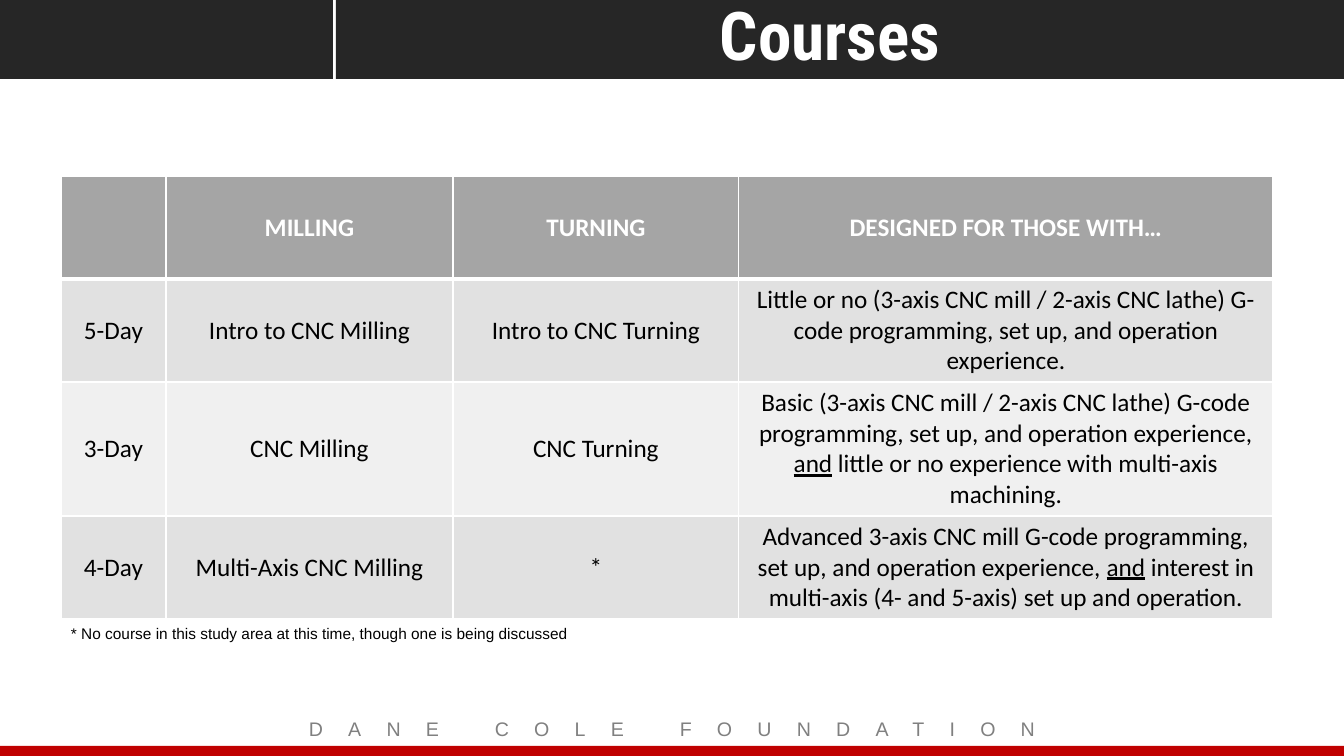
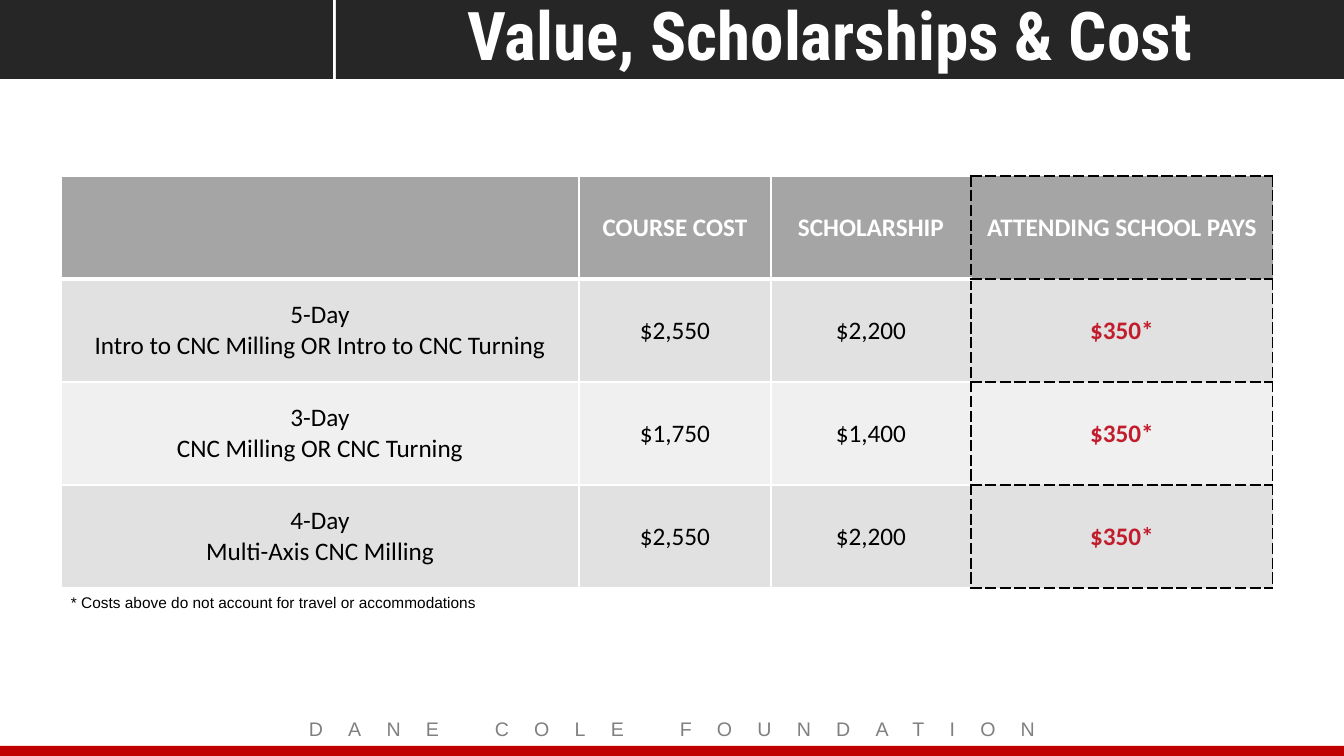
import lxml.etree
import pptx
import pptx.dml.color
import pptx.enum.shapes
import pptx.enum.text
import pptx.oxml.ns
import pptx.util

RGB = pptx.dml.color.RGBColor
ALIGN = pptx.enum.text.PP_ALIGN
MIDDLE = pptx.enum.text.MSO_ANCHOR.MIDDLE
RECTANGLE = pptx.enum.shapes.MSO_SHAPE.RECTANGLE

WHITE = RGB(0xFF, 0xFF, 0xFF)
BLACK = RGB(0x00, 0x00, 0x00)
CHARCOAL = RGB(0x26, 0x26, 0x26)
RED = RGB(0xC0, 0x00, 0x00)
PRICE_RED = RGB(0xC2, 0x1D, 0x2C)
FOOTER_GRAY = RGB(0x80, 0x80, 0x80)
HEADER_GRAY = RGB(0xA5, 0xA5, 0xA5)
DARK_ROW = RGB(0xE1, 0xE1, 0xE1)
LIGHT_ROW = RGB(0xF0, 0xF0, 0xF0)

WIDTH, HEIGHT = 1344, 756
SCALE = 12192000 / WIDTH
TABLE_LEFT, TABLE_TOP, TABLE_WIDTH = 61, 176, 1212
ROW_HEIGHT = 103

# left, top, width, height, fill
BANDS = [
    (0, 746, WIDTH, 10, RED),
    (336, 0, 1008, 79, CHARCOAL),
    (0, 0, 333, 79, CHARCOAL),
]

SLIDES = [
    {
        "title": "Courses",
        "columns": [105, 287, 286, 534],
        "heights": [ROW_HEIGHT, ROW_HEIGHT, 134, ROW_HEIGHT],
        "rows": [
            ["", "MILLING", "TURNING", "DESIGNED FOR THOSE WITH…"],
            ["5-Day", "Intro to CNC Milling", "Intro to CNC Turning",
             "Little or no (3-axis CNC mill / 2-axis CNC lathe) G-code "
             "programming, set up, and operation experience."],
            ["3-Day", "CNC Milling", "CNC Turning",
             "Basic (3-axis CNC mill / 2-axis CNC lathe) G-code programming, "
             "set up, and operation experience, _and_ little or no experience "
             "with multi-axis machining."],
            ["4-Day", "Multi-Axis CNC Milling", "*",
             "Advanced 3-axis CNC mill G-code programming, set up, and "
             "operation experience, _and_ interest in multi-axis "
             "(4- and 5-axis) set up and operation."],
        ],
        "price_column": None,
        "note": "* No course in this study area at this time, "
                "though one is being discussed",
    },
    {
        "title": "Value, Scholarships & Cost",
        "columns": [518, 192, 200, 302],
        "heights": [ROW_HEIGHT] * 4,
        "rows": [
            ["", "COURSE COST", "SCHOLARSHIP", "ATTENDING SCHOOL PAYS"],
            ["5-Day\vIntro to CNC Milling OR Intro to CNC Turning",
             "$2,550", "$2,200", "$350*"],
            ["3-Day\vCNC Milling OR CNC Turning", "$1,750", "$1,400", "$350*"],
            ["4-Day\vMulti-Axis CNC Milling", "$2,550", "$2,200", "$350*"],
        ],
        "price_column": 3,
        "note": "* Costs above do not account for travel or accommodations",
    },
]


def px(*lengths):
    """Turn pixel lengths into a list of EMU."""
    return [pptx.util.Emu(round(n * SCALE)) for n in lengths]


def add_text(s, box, text, font, size, color, align=ALIGN.CENTER, spacing=1.0):
    """Add a one-line text box and return its run."""
    tf = s.shapes.add_textbox(*px(*box)).text_frame
    tf.word_wrap = True
    tf.vertical_anchor = MIDDLE
    tf.text = text
    p = tf.paragraphs[0]
    p.alignment = align
    p.line_spacing = spacing
    r = p.runs[0]
    r.font.name = font
    r.font.size = pptx.util.Pt(size)
    r.font.color.rgb = color
    return r


prs = pptx.Presentation()
prs.slide_width, prs.slide_height = px(WIDTH, HEIGHT)

for content in SLIDES:
    s = prs.slides.add_slide(prs.slide_layouts[6])

    for *box, color in BANDS:
        sp = s.shapes.add_shape(RECTANGLE, *px(*box))
        sp.shadow.inherit = False
        sp.fill.solid()
        sp.fill.fore_color.rgb = color
        sp.line.fill.background()

    footer = add_text(s, (0, 707, WIDTH, 46), "DANE COLE FOUNDATION",
                      "Arial", 14, FOOTER_GRAY, spacing=0.9)
    footer.font._element.set("spc", "1800")
    title = add_text(s, (357, 3, 946, 76), content["title"],
                     "Roboto Condensed", 48, WHITE, spacing=0.8)
    title.font.bold = True

    rows, columns, heights = content["rows"], content["columns"], content["heights"]
    price_column = content["price_column"]
    table = s.shapes.add_table(
        len(rows), len(columns),
        *px(TABLE_LEFT, TABLE_TOP, TABLE_WIDTH, sum(heights))).table
    table.horz_banding = False
    for column, width in zip(table.columns, px(*columns)):
        column.width = width
    for row, height in zip(table.rows, px(*heights)):
        row.height = height

    for i, texts in enumerate(rows):
        for j, text in enumerate(texts):
            is_header, is_price = i == 0, j == price_column
            cell = table.cell(i, j)
            cell.vertical_anchor = MIDDLE
            cell.fill.solid()
            cell.fill.fore_color.rgb = (
                HEADER_GRAY if is_header else DARK_ROW if i % 2 else LIGHT_ROW)

            p = cell.text_frame.paragraphs[0]
            p.alignment = ALIGN.CENTER
            before, underlined, after = text.partition("_and_")
            p.text = before
            if underlined:
                r = p.add_run()
                r.text = "and"
                r.font.underline = True
                p.add_run().text = after
            for r in p.runs:
                r.font.name = "Calibri"
                r.font.size = pptx.util.Pt(18)
                r.font.bold = is_header or is_price
                r.font.color.rgb = (
                    WHITE if is_header else PRICE_RED if is_price else BLACK)

            # Borders go before the fill, in the order left, right, top, bottom
            tcPr = cell._tc.get_or_add_tcPr()
            for k, side in enumerate("LRTB"):
                dashed = is_price or (side == "R" and j + 1 == price_column)
                under_header = (i, side) in ((0, "B"), (1, "T"))
                points = 3 if under_header and not dashed else 1
                ln = lxml.etree.Element(pptx.oxml.ns.qn("a:ln" + side),
                                        w=str(pptx.util.Pt(points)))
                fill = lxml.etree.SubElement(ln, pptx.oxml.ns.qn("a:solidFill"))
                lxml.etree.SubElement(fill, pptx.oxml.ns.qn("a:srgbClr"),
                                      val=str(BLACK if dashed else WHITE))
                lxml.etree.SubElement(ln, pptx.oxml.ns.qn("a:prstDash"),
                                      val="dash" if dashed else "solid")
                tcPr.insert(k, ln)

    add_text(s, (TABLE_LEFT, TABLE_TOP + sum(heights), 677, 29),
             content["note"], "Arial", 11, BLACK, align=ALIGN.LEFT)

prs.save("out.pptx")
